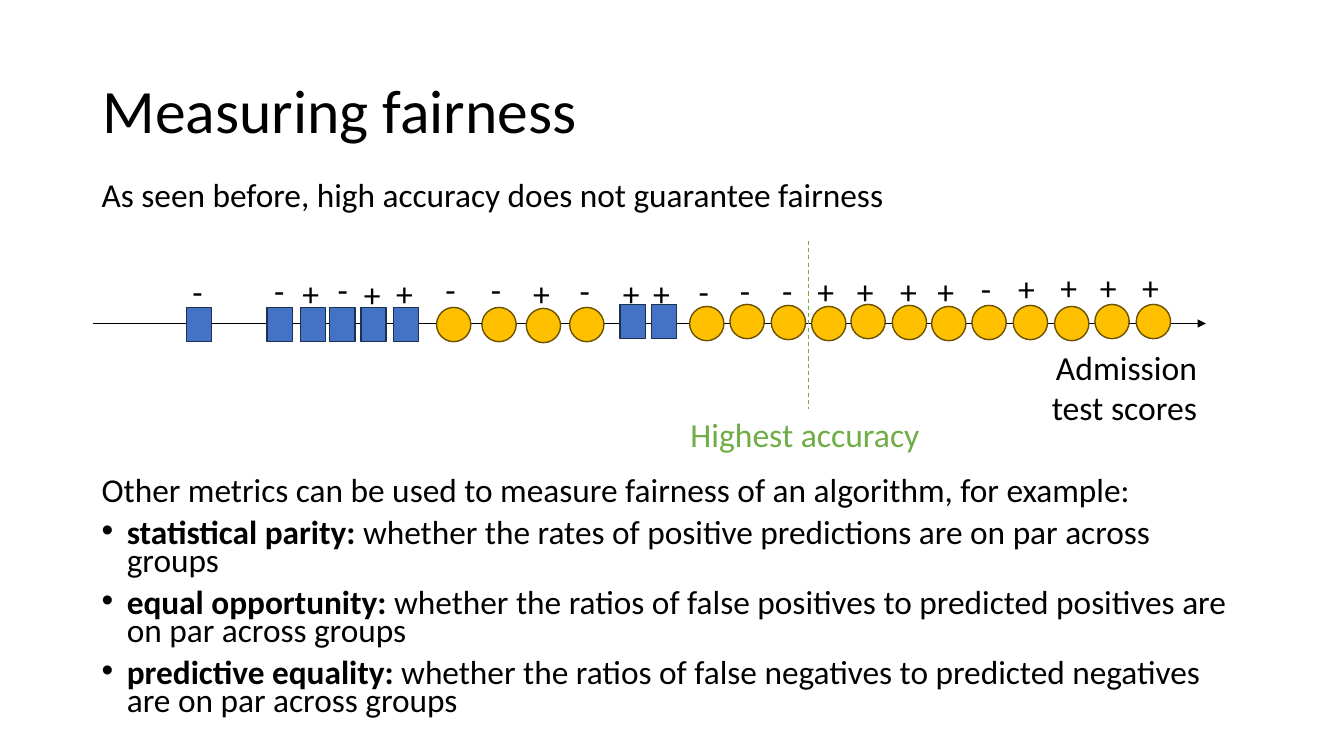
from lxml.etree import SubElement
from pptx import Presentation
from pptx.dml.color import RGBColor
from pptx.enum.dml import MSO_LINE_DASH_STYLE as Dash
from pptx.enum.shapes import MSO_CONNECTOR as Connector, MSO_SHAPE as Shape
from pptx.enum.text import MSO_ANCHOR as Anchor, PP_ALIGN as Align
from pptx.oxml.ns import qn
from pptx.util import Inches, Pt

BLACK = RGBColor(0x00, 0x00, 0x00)
BLUE = RGBColor(0x44, 0x72, 0xC4)
NAVY = RGBColor(0x1C, 0x30, 0x52)
GOLD = RGBColor(0xFF, 0xC0, 0x00)
BROWN = RGBColor(0x6B, 0x51, 0x00)
GREEN = RGBColor(0x70, 0xAD, 0x47)

GROUPS = {
    "square": (Shape.RECTANGLE, 0.25, BLUE, NAVY),
    "circle": (Shape.OVAL, 0.34, GOLD, BROWN),
}
MARK_WIDTHS = {"+": 0.37, "-": 0.31}

APPLICANTS = [
    ("square", 1.85, 3.05, "-", 1.81, 2.64),
    ("square", 2.65, 3.05, "-", 2.62, 2.63),
    ("square", 2.98, 3.05, "+", 2.9, 2.66),
    ("square", 3.27, 3.05, "-", 3.25, 2.62),
    ("square", 3.58, 3.05, "+", 3.51, 2.67),
    ("square", 3.9, 3.05, "+", 3.83, 2.66),
    ("circle", 4.33, 3.05, "-", 4.32, 2.62),
    ("circle", 4.78, 3.05, "-", 4.77, 2.62),
    ("circle", 5.22, 3.06, "+", 5.19, 2.66),
    ("circle", 5.65, 3.05, "-", 5.65, 2.63),
    ("square", 6.15, 3.02, "+", 6.08, 2.66),
    ("square", 6.46, 3.02, "+", 6.38, 2.66),
    ("circle", 6.84, 3.04, "-", 6.83, 2.64),
    ("circle", 7.24, 3.02, "-", 7.24, 2.63),
    ("circle", 7.65, 3.03, "-", 7.66, 2.63),
    ("circle", 8.05, 3.04, "+", 8.01, 2.64),
    ("circle", 8.44, 3.02, "+", 8.4, 2.64),
    ("circle", 8.85, 3.03, "+", 8.83, 2.64),
    ("circle", 9.24, 3.04, "+", 9.2, 2.64),
    ("circle", 9.64, 3.03, "-", 9.63, 2.61),
    ("circle", 10.05, 3.03, "+", 10.0, 2.61),
    ("circle", 10.46, 3.04, "+", 10.42, 2.6),
    ("circle", 10.86, 3.02, "+", 10.81, 2.6),
    ("circle", 11.27, 3.02, "+", 11.23, 2.6),
]

METRICS = [
    ("statistical parity: ",
     "whether the rates of positive predictions are on par across groups"),
    ("equal opportunity: ",
     "whether the ratios of false positives to predicted positives are on par across groups"),
    ("predictive equality: ",
     "whether the ratios of false negatives to predicted negatives are on par across groups"),
]


def write(paragraph, text, size=24, color=BLACK, bold=False):
    span = paragraph.add_run()
    span.text = text
    span.font.name = "Calibri"
    span.font.size = Pt(size)
    span.font.bold = bold
    span.font.color.rgb = color


def add_bullet(paragraph):
    properties = paragraph._p.get_or_add_pPr()
    properties.set("marL", str(Inches(0.25)))
    properties.set("indent", str(-Inches(0.25)))
    color = SubElement(properties, qn("a:buClr"))
    SubElement(color, qn("a:srgbClr"), val=str(BLACK))
    SubElement(properties, qn("a:buFont"), typeface="Arial")
    SubElement(properties, qn("a:buChar"), char="•")


class SlideBuilder:
    font_size = 24
    body_size = 23.8
    body_spacing = 0.7

    def __init__(self, page):
        self.page = page

    def frame(self, left, top, width, height):
        box = self.page.shapes.add_textbox(
            Inches(left), Inches(top), Inches(width), Inches(height))
        box.text_frame.word_wrap = True
        return box.text_frame

    def label(self, text, left, top, width, height=0.5, align=Align.LEFT, color=BLACK):
        para = self.frame(left, top, width, height).paragraphs[0]
        para.alignment = align
        write(para, text, size=self.font_size, color=color)

    def title(self, text, left, top, width, height):
        frame = self.frame(left, top, width, height)
        frame.vertical_anchor = Anchor.MIDDLE
        para = frame.paragraphs[0]
        para.line_spacing = 0.9
        write(para, text, size=44)

    def body(self, intro, left, top, width, height, items=()):
        frame = self.frame(left, top, width, height)
        para = frame.paragraphs[0]
        para.line_spacing = self.body_spacing
        write(para, intro, size=self.body_size)
        for term, meaning in items:
            para = frame.add_paragraph()
            add_bullet(para)
            para.line_spacing = self.body_spacing
            para.space_before = Pt(10)
            write(para, term, size=self.body_size, bold=True)
            write(para, meaning, size=self.body_size)

    def line(self, start, end, color, width, dash=None, arrow=False):
        connector = self.page.shapes.add_connector(
            Connector.STRAIGHT, *map(Inches, (*start, *end)))
        connector.line.color.rgb = color
        connector.line.width = Pt(width)
        if dash:
            connector.line.dash_style = dash
        if arrow:
            SubElement(connector.line._get_or_add_ln(), qn("a:tailEnd"), type="triangle")
        SubElement(connector._element.spPr, qn("a:effectLst"))

    def applicant(self, group, left, top):
        kind, width, fill, outline = GROUPS[group]
        shape = self.page.shapes.add_shape(
            kind, Inches(left), Inches(top), Inches(width), Inches(0.34))
        shape.shadow.inherit = False
        shape.fill.solid()
        shape.fill.fore_color.rgb = fill
        shape.line.color.rgb = outline
        shape.line.width = Pt(1)


def main():
    deck = Presentation()
    deck.slide_width = Inches(13.33)
    deck.slide_height = Inches(7.5)
    slide = SlideBuilder(deck.slides.add_slide(deck.slide_layouts[6]))

    slide.title("Measuring fairness", 0.92, 0.4, 11.5, 1.45)
    slide.body("As seen before, high accuracy does not guarantee fairness",
               0.91, 1.79, 11.5, 0.5)
    slide.body("Other metrics can be used to measure fairness of an algorithm, for example:",
               0.91, 4.71, 11.5, 2.58, items=METRICS)

    slide.line((0.92, 3.21), (11.96, 3.21), BLACK, 1, arrow=True)
    slide.label("Admission test scores", 9.83, 3.39, 2.14, 0.91, align=Align.RIGHT)
    for group, left, top, mark, mark_left, mark_top in APPLICANTS:
        slide.applicant(group, left, top)
        slide.label(mark, mark_left, mark_top, MARK_WIDTHS[mark])

    slide.line((8.02, 2.39), (8.02, 4.06), GREEN, 0.75, dash=Dash.DASH)
    slide.label("Highest accuracy", 6.75, 4.06, 2.5, color=GREEN)

    deck.save("out.pptx")


if __name__ == "__main__":
    main()
